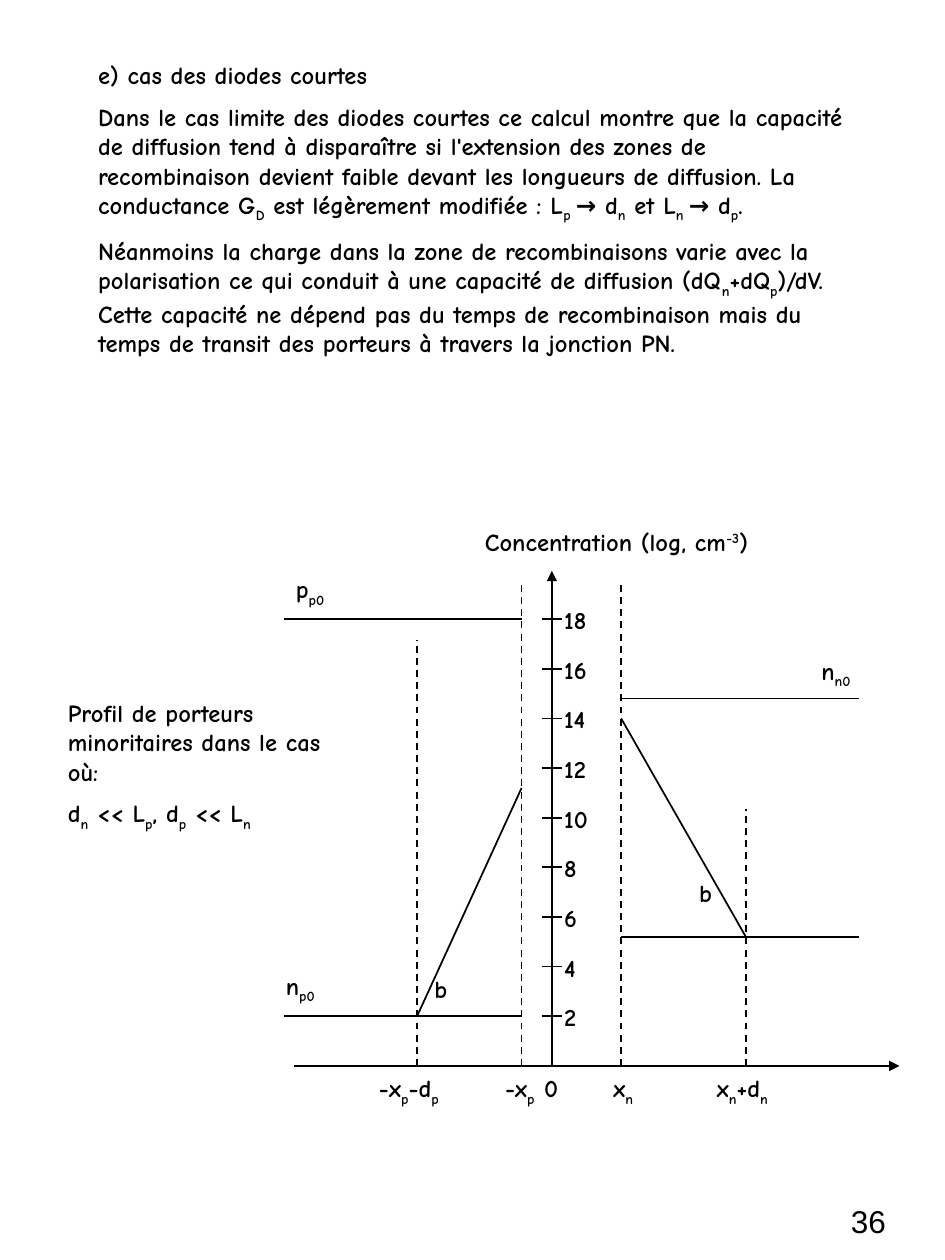
from typing import NamedTuple

from lxml.etree import SubElement
from pptx import Presentation
from pptx.dml.color import RGBColor
from pptx.enum.dml import MSO_LINE
from pptx.enum.shapes import MSO_CONNECTOR
from pptx.enum.text import MSO_AUTO_SIZE, PP_ALIGN
from pptx.oxml.ns import qn
from pptx.util import Inches, Pt

BLACK = RGBColor(0, 0, 0)
FONT = "Comic Neue"

# Axes and depth limits, in inches
BASE = 8.46
STEP = 0.197  # height of one decade
LEFT, RIGHT = 2.25, 6.82
MID = 4.38
XP, XN = 4.14, 4.93
XPD, XND = 3.31, 5.92


class Label(NamedTuple):
    text: str
    left: float
    top: float
    width: float = 0.47


class Line(NamedTuple):
    x1: float
    y1: float
    x2: float
    y2: float
    dash: bool = False
    arrow: bool = False


def level(power: float) -> float:
    """Height on the slide of a concentration of 10^power."""
    return BASE - power * STEP


def add_text(slide, text: str, left: float, top: float, width: float,
             height: float = 0.33, *, size: float = 14, font: str = FONT,
             bold: bool = True, align=PP_ALIGN.LEFT, shift: int = -25,
             grow: bool = True) -> None:
    """Each line is a paragraph; parts between ~ marks are shifted by a percentage."""
    box = slide.shapes.add_textbox(Inches(left), Inches(top), Inches(width), Inches(height))
    frame = box.text_frame
    frame.word_wrap = True
    frame.auto_size = MSO_AUTO_SIZE.SHAPE_TO_FIT_TEXT if grow else MSO_AUTO_SIZE.NONE
    for i, row in enumerate(text.split("\n")):
        para = frame.add_paragraph() if i else frame.paragraphs[0]
        para.alignment = align
        if grow:
            space = SubElement(para._p.get_or_add_pPr(), qn("a:spcBef"))
            SubElement(space, qn("a:spcPct"), val="50000")
        for j, part in enumerate(row.split("~")):
            if not part:
                continue
            run = para.add_run()
            run.text = part
            run.font.size = Pt(size)
            run.font.name = font
            run.font.bold = bold
            run.font.color.rgb = BLACK
            if j % 2:
                run.font._element.set("baseline", str(shift * 1000))


def add_line(slide, line: Line) -> None:
    shape = slide.shapes.add_connector(
        MSO_CONNECTOR.STRAIGHT, Inches(line.x1), Inches(line.y1),
        Inches(line.x2), Inches(line.y2))
    shape.line.color.rgb = BLACK
    shape.line.width = Pt(1)
    if line.dash:
        shape.line.dash_style = MSO_LINE.DASH
    if line.arrow:
        SubElement(shape.line._get_or_add_ln(), qn("a:tailEnd"), type="triangle")
    SubElement(shape._element.spPr, qn("a:effectLst"))


INTRO = "\n".join((
    "e) cas des diodes courtes",
    "Dans le cas limite des diodes courtes ce calcul montre que la capacité "
    "de diffusion tend à disparaître si l'extension des zones de "
    "recombinaison devient faible devant les longueurs de diffusion. La "
    "conductance G~D~ est légèrement modifiée : L~p ~→ d~n~ et L~n ~→ d~p~.",
    "Néanmoins la charge dans la zone de recombinaisons varie avec la "
    "polarisation ce qui conduit à une capacité de diffusion (dQ~n~+dQ~p~)/dV. "
    "Cette capacité ne dépend pas du temps de recombinaison mais du "
    "temps de transit des porteurs à travers la jonction PN.",
))
PROFILE = ("Profil de porteurs minoritaires dans le cas où:\n"
           "d~n~ << L~p~, d~p~ << L~n~")

AXES = [
    Line(2.33, BASE, 7.14, BASE, arrow=True),
    Line(MID, BASE, MID, 4.53, arrow=True),
]
LIMITS = [Line(x, BASE, x, top, dash=True)
          for x, top in ((XPD, 5.08), (XP, 4.61), (XN, 4.61), (XND, 6.42))]
LEVELS = [Line(x1, level(v), x2, level(v))
          for x1, x2, v in ((XP, LEFT, 18), (XP, LEFT, 2),
                            (RIGHT, XN, 14.8), (RIGHT, XN, 5.2))]
SLOPES = [
    Line(XP, level(11.2), XPD, level(2)),
    Line(XN, level(14), XND, level(5.2)),
]
POWERS = range(2, 19, 2)
TICKS = [Line(MID - 0.08, level(v), MID + 0.08, level(v)) for v in POWERS]

MARKS = [Label(str(v), MID, level(v) - 0.16) for v in POWERS]
NAMES = [
    Label("p~p0~", 2.25, 4.51),
    Label("n~p0~", 2.17, 7.66),
    Label("n~n0~", 6.42, 5.16),
    Label("b", 3.35, 7.68),
    Label("b", 5.45, 6.92),
    Label("-x~p~-d~p~", 2.91, 8.47, 0.83),
    Label("-x~p~", 3.91, 8.47, 0.71),
    Label("0", 4.22, 8.47, 0.55),
    Label("x~n~", 4.77, 8.47, 0.55),
    Label("x~n~+d~n~", 5.59, 8.47, 0.75),
]


def main() -> None:
    deck = Presentation()
    deck.slide_width, deck.slide_height = Inches(7.5), Inches(10)
    slide = deck.slides.add_slide(deck.slide_layouts[6])

    add_text(slide, INTRO, 0.68, 0.43, 6.22, 2.93)
    add_text(slide, PROFILE, 0.44, 5.49, 2.28, 1.16)
    add_text(slide, "Concentration (log, cm~-3~)", 3.75, 4.13, 3.07, shift=30)
    for line in AXES + LIMITS + LEVELS + SLOPES + TICKS:
        add_line(slide, line)
    for label in MARKS + NAMES:
        add_text(slide, *label)
    add_text(slide, "36", 5.38, 9.49, 1.75, 0.31, size=18, font="Arial",
             bold=False, align=PP_ALIGN.RIGHT, grow=False)
    deck.save("out.pptx")


if __name__ == "__main__":
    main()
